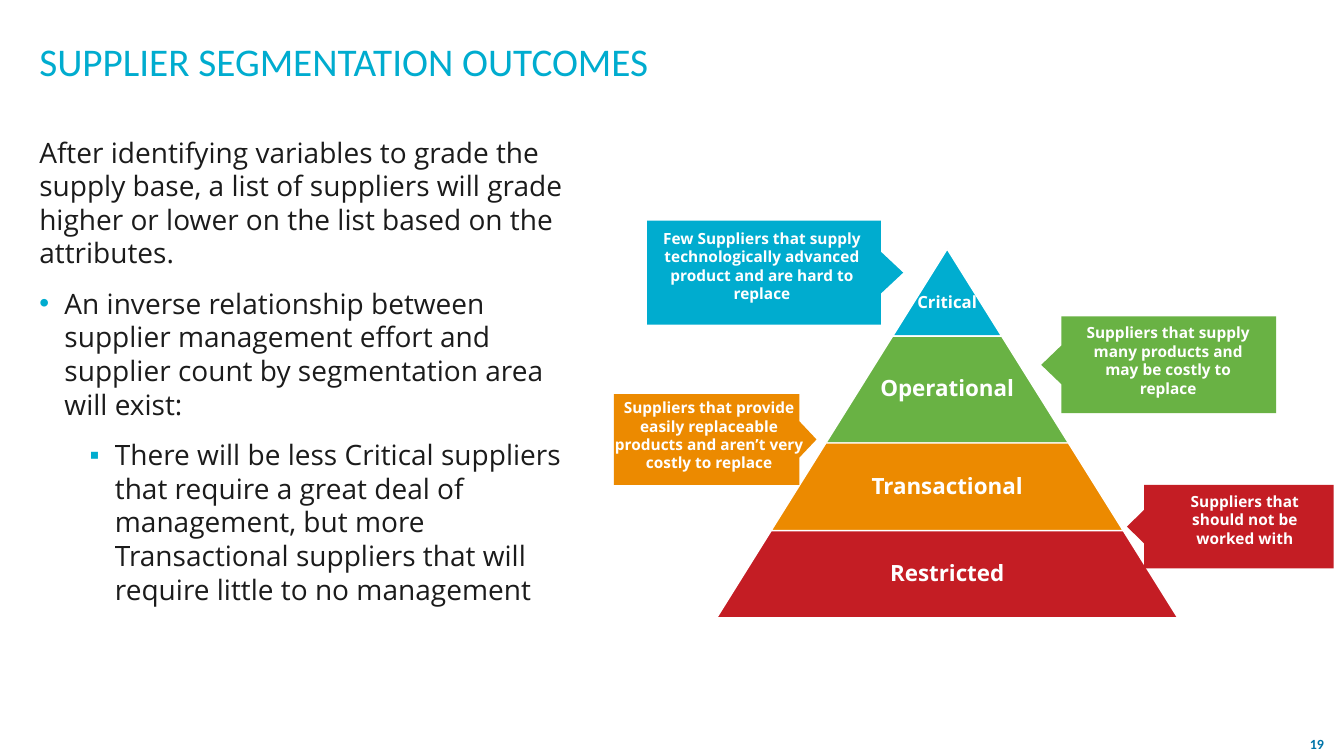
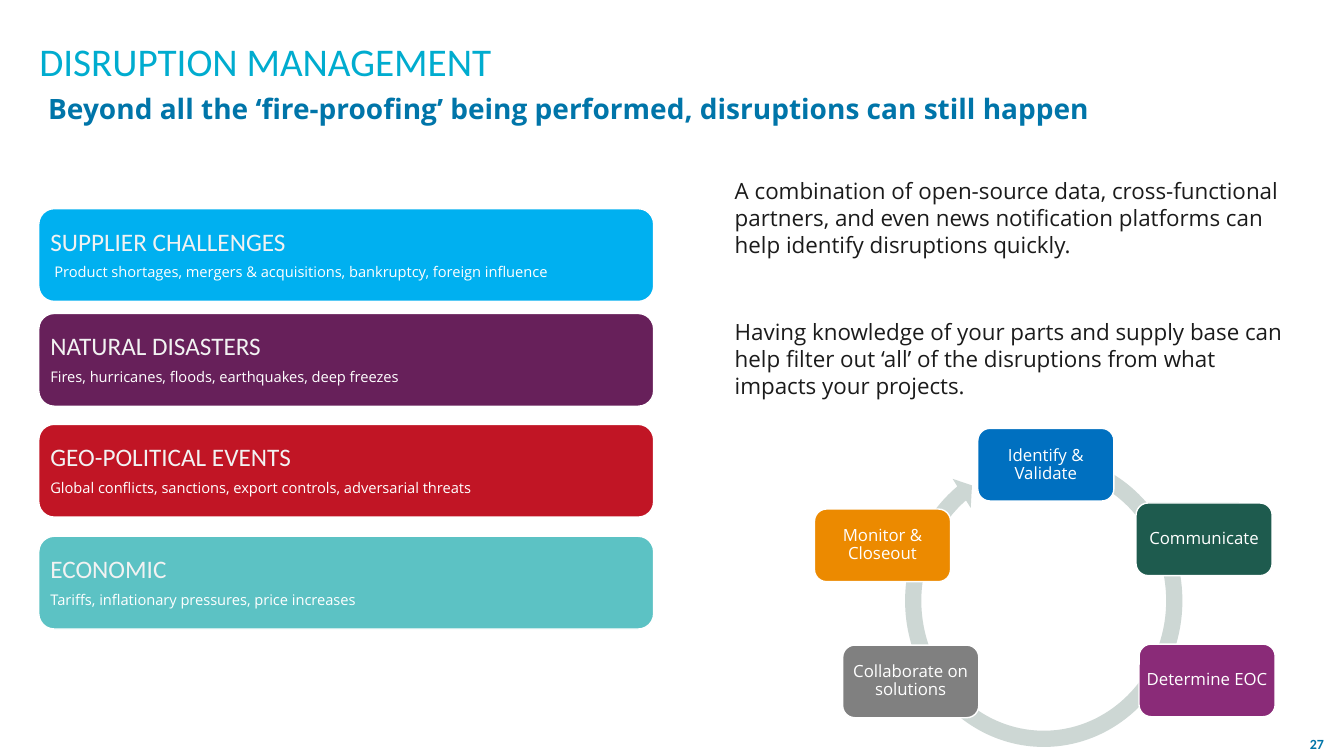
from dataclasses import dataclass
from typing import NamedTuple

from lxml import etree
from pptx import Presentation
from pptx import util as u
from pptx.dml.color import RGBColor
from pptx.enum import shapes, text
from pptx.oxml import ns

# The page is a grid of square cells, a tenth of an inch each.
CELL = u.Inches(0.1)
COLUMNS, ROWS = 133.33, 75
HEADING_FONT, BODY_FONT = "Calibri", "Open Sans"

COLORS = {
    "title": "00ACCF", "accent": "0075A9", "ink": "1B1B1B", "white": "FFFFFF",
    "pale": "F2F2F2", "cyan": "00ADD0", "green": "69B244", "orange": "EC8A00",
    "red": "C41D24", "sky": "00B0F0", "plum": "67205A", "crimson": "C11525",
    "teal": "5CC2C4", "ring": "CDD7D4", "blue": "0070C0", "forest": "1E5B4E",
    "violet": "8A2B78", "gray": "808080",
}


class Area(NamedTuple):
    column: float
    row: float
    columns: float
    rows: float


class Insets(NamedTuple):
    left: float = 0
    top: float = 0
    right: float = 0
    bottom: float = 0


@dataclass(frozen=True)
class Para:
    words: str
    size: float
    color: str = "white"
    font: str = BODY_FONT
    bold: bool = False
    align: text.PP_ALIGN = text.PP_ALIGN.LEFT
    line_spacing: float = 1
    before: float = 0
    after: float = 0
    margin: float = 0
    bullet: str = ""


@dataclass(frozen=True)
class Tier:
    label: str
    color: str
    rows: float
    size: float = 16
    drop: float = 0


@dataclass(frozen=True)
class Callout:
    """A banner whose arrow tip points from the near edge to the pyramid."""
    words: str
    color: str
    tip: float
    near: float
    far: float
    top: float
    rows: float
    insets: Insets


@dataclass(frozen=True)
class Card:
    heading: str
    detail: str
    color: str
    row: float
    indent: float = 0


@dataclass(frozen=True)
class Step:
    label: str
    color: str
    column: float
    row: float


TITLE = Area(3.9, 2.6, 111.8, 7.4)
PAGE_NUMBER = Area(128, 72.6, 5.3, 2.4)
BOX_INSETS = Insets(1, 0.5, 1, 0.5)

APEX_COLUMN, APEX_ROW, SLOPE = 93.97, 24.7, 0.625
TIERS = (
    Tier("Critical", "cyan", 8.65, 12, 2),
    Tier("Operational", "green", 10.6),
    Tier("Transactional", "orange", 8.7),
    Tier("Restricted", "red", 8.65),
)
CALLOUTS = (
    Callout("Suppliers that should not be worked with", "red",
            111.8, 113.5, 132.3, 48.1, 8.3, Insets(5.5, 0.7, 2.6)),
    Callout("Suppliers that provide easily replaceable products and aren’t very "
            "costly to replace", "orange",
            81, 79.3, 60.9, 39.1, 9, Insets(0, 0.4, 1.2)),
    Callout("Suppliers that supply many products and may be costly to replace",
            "green", 103.3, 105.3, 126.6, 31.4, 9.6, Insets(3.4, 0.7, 1.5)),
    Callout("Few Suppliers that supply technologically advanced product and are "
            "hard to replace", "title",
            89.6, 87.4, 64.2, 21.9, 10.3, Insets(0.9, 0.8, 3.5)),
)
CARDS = (
    Card("SUPPLIER CHALLENGES", "Product shortages, mergers & acquisitions, "
         "bankruptcy, foreign influence", "sky", 20.7, 0.4),
    Card("NATURAL DISASTERS",
         "Fires, hurricanes, floods, earthquakes, deep freezes", "plum", 31.1),
    Card("GEO-POLITICAL EVENTS", "Global conflicts, sanctions, export controls, "
         "adversarial threats", "crimson", 42.1),
    Card("ECONOMIC", "Tariffs, inflationary pressures, price increases",
         "teal", 53.2),
)
STEPS = (
    Step("Identify & Validate", "blue", 97, 42.5),
    Step("Communicate", "forest", 112.7, 49.9),
    Step("Determine EOC", "violet", 113, 63.9),
    Step("Collaborate on solutions", "gray", 83.6, 64),
    Step("Monitor & Closeout", "orange", 80.8, 50.5),
)


def cells(count: float) -> u.Emu:
    return u.Emu(round(count * CELL))


def rgb(name: str) -> RGBColor:
    return RGBColor.from_string(COLORS[name])


def add_bullet(paragraph, mark: str) -> None:
    properties = paragraph._p.get_or_add_pPr()
    properties.set("indent", str(-cells(2.5)))
    color = etree.SubElement(properties, ns.qn("a:buClr"))
    etree.SubElement(color, ns.qn("a:srgbClr"), val=COLORS["title"])
    etree.SubElement(properties, ns.qn("a:buFont"), typeface="Arial")
    etree.SubElement(properties, ns.qn("a:buChar"), char=mark)


def write(frame, paras: list[Para], insets: Insets = Insets(),
          anchor=text.MSO_ANCHOR.MIDDLE, wrap: bool = True) -> None:
    frame.word_wrap = wrap
    frame.auto_size = text.MSO_AUTO_SIZE.NONE
    frame.vertical_anchor = anchor
    frame.margin_left, frame.margin_top, frame.margin_right, frame.margin_bottom = (
        cells(inset) for inset in insets)
    for index, para in enumerate(paras):
        paragraph = frame.add_paragraph() if index else frame.paragraphs[0]
        paragraph.text = para.words
        if para.margin:
            paragraph._p.get_or_add_pPr().set("marL", str(cells(para.margin)))
        if para.bullet:
            add_bullet(paragraph, para.bullet)
        paragraph.alignment = para.align
        paragraph.line_spacing = para.line_spacing
        paragraph.space_before = u.Pt(para.before)
        paragraph.space_after = u.Pt(para.after)
        font = paragraph.font
        font.name, font.size, font.bold = para.font, u.Pt(para.size), para.bold
        font.color.rgb = rgb(para.color)


def add_text(page, area: Area, paras: list[Para], insets: Insets = Insets(),
             anchor=text.MSO_ANCHOR.TOP) -> None:
    box = page.shapes.add_textbox(*map(cells, area))
    write(box.text_frame, paras, insets, anchor)


def paint(shape, color: str, outlined: bool = True) -> None:
    shape.shadow.inherit = False
    shape.fill.solid()
    shape.fill.fore_color.rgb = rgb(color)
    if outlined:
        shape.line.color.rgb = rgb("white")
        shape.line.width = u.Pt(1)
    else:
        shape.line.fill.background()


def add_preset(page, kind, area: Area, color: str, outlined: bool = True):
    shape = page.shapes.add_shape(kind, *map(cells, area))
    paint(shape, color, outlined)
    return shape


def add_page(deck, title: str, number: int):
    """Add a slide with the shared title style and page number."""
    page = deck.slides.add_slide(deck.slide_layouts.get_by_name("Title Only"))
    heading = page.shapes.title
    heading.left, heading.top, heading.width, heading.height = map(cells, TITLE)
    write(heading.text_frame,
          [Para(title, 28, "title", HEADING_FONT, line_spacing=0.9)])
    add_text(page, PAGE_NUMBER,
             [Para(str(number), 10, "accent", HEADING_FONT, True,
                   text.PP_ALIGN.CENTER)],
             BOX_INSETS, text.MSO_ANCHOR.MIDDLE)
    return page


def add_pyramid(page) -> None:
    depth = 0.0
    for tier in TIERS:
        row = APEX_ROW + depth
        depth += tier.rows
        half = SLOPE * depth
        shape = add_preset(page, shapes.MSO_SHAPE.TRAPEZOID,
                           Area(APEX_COLUMN - half, row, 2 * half, tier.rows),
                           tier.color)
        shape.adjustments[0] = SLOPE
        # A trapezoid's text area starts lower the steeper its sides are.
        lift = tier.rows / 3 * SLOPE * tier.rows / half
        write(shape.text_frame,
              [Para(tier.label, tier.size, bold=True, line_spacing=0.9,
                    align=text.PP_ALIGN.CENTER)],
              Insets(bottom=lift - tier.drop), wrap=False)


def add_callout(page, callout: Callout) -> None:
    def point(column: float, share: float) -> tuple[int, int]:
        return cells(column), cells(callout.top + share * callout.rows)

    builder = page.shapes.build_freeform(*point(callout.near, 0))
    builder.add_line_segments([
        point(callout.near, 0.3), point(callout.tip, 0.5),
        point(callout.near, 0.7), point(callout.near, 1),
        point(callout.far, 1), point(callout.far, 0),
    ])
    shape = builder.convert_to_shape()
    paint(shape, callout.color, outlined=False)
    write(shape.text_frame,
          [Para(callout.words, 11, bold=True, align=text.PP_ALIGN.CENTER)],
          callout.insets, text.MSO_ANCHOR.TOP)


def add_card(page, card: Card) -> None:
    shape = add_preset(page, shapes.MSO_SHAPE.ROUNDED_RECTANGLE,
                       Area(3.85, card.row, 61, 9.2), card.color)
    write(shape.text_frame,
          [Para(card.heading, 18, "pale", HEADING_FONT, line_spacing=0.9, after=6),
           Para(card.detail, 10.5, line_spacing=0.9, margin=card.indent)],
          Insets(0.7, 0.7, 0.7, 0.7))


def add_cycle(page) -> None:
    ring = add_preset(page, shapes.MSO_SHAPE.CIRCULAR_ARROW,
                      Area(88.9, 44.2, 29.3, 30.8), "ring", outlined=False)
    for index, value in enumerate((0.055, 3.307, 139.562, 172.772, 0.058)):
        ring.adjustments[index] = value
    for step in STEPS:
        shape = add_preset(page, shapes.MSO_SHAPE.ROUNDED_RECTANGLE,
                           Area(step.column, step.row, 13.5, 7.2), step.color)
        write(shape.text_frame,
              [Para(step.label, 12, line_spacing=0.9, align=text.PP_ALIGN.CENTER)],
              Insets(0.4, 0.4, 0.4, 0.4))


def build_segmentation(deck) -> None:
    page = add_page(deck, "SUPPLIER SEGMENTATION OUTCOMES", 19)
    add_text(page, Area(3.9, 13.4, 53.6, 55.4), [
        Para("After identifying variables to grade the supply base, a list of "
             "suppliers will grade higher or lower on the list based on the "
             "attributes.", 20, "ink", after=6),
        Para("An inverse relationship between supplier management effort and "
             "supplier count by segmentation area will exist:",
             20, "ink", before=6, after=6, margin=2.5, bullet="•"),
        Para("There will be less Critical suppliers that require a great deal of "
             "management, but more Transactional suppliers that will require "
             "little to no management",
             20, "ink", before=6, after=6, margin=7.5, bullet="▪"),
    ])
    add_pyramid(page)
    for callout in CALLOUTS:
        add_callout(page, callout)


def build_disruption(deck) -> None:
    page = add_page(deck, "DISRUPTION MANAGEMENT", 27)
    for card in CARDS:
        add_card(page, card)
    add_cycle(page)
    add_text(page, Area(71.9, 17.1, 57.5, 23.2), [
        Para("A combination of open-source data, cross-functional partners, and "
             "even news notification platforms can help identify disruptions "
             "quickly.", 16, "ink", after=6),
        Para("Having knowledge of your parts and supply base can help filter out "
             "‘all’ of the disruptions from what impacts your projects.",
             16, "ink", before=37, after=6),
    ], BOX_INSETS)
    add_text(page, Area(3.8, 8.6, 118.6, 10), [
        Para("Beyond all the ‘fire-proofing’ being performed, disruptions can "
             "still happen", 20, "accent", bold=True, after=6),
    ], BOX_INSETS)


def main() -> None:
    deck = Presentation()
    deck.slide_width, deck.slide_height = cells(COLUMNS), cells(ROWS)
    build_segmentation(deck)
    build_disruption(deck)
    deck.save("out.pptx")


if __name__ == "__main__":
    main()
